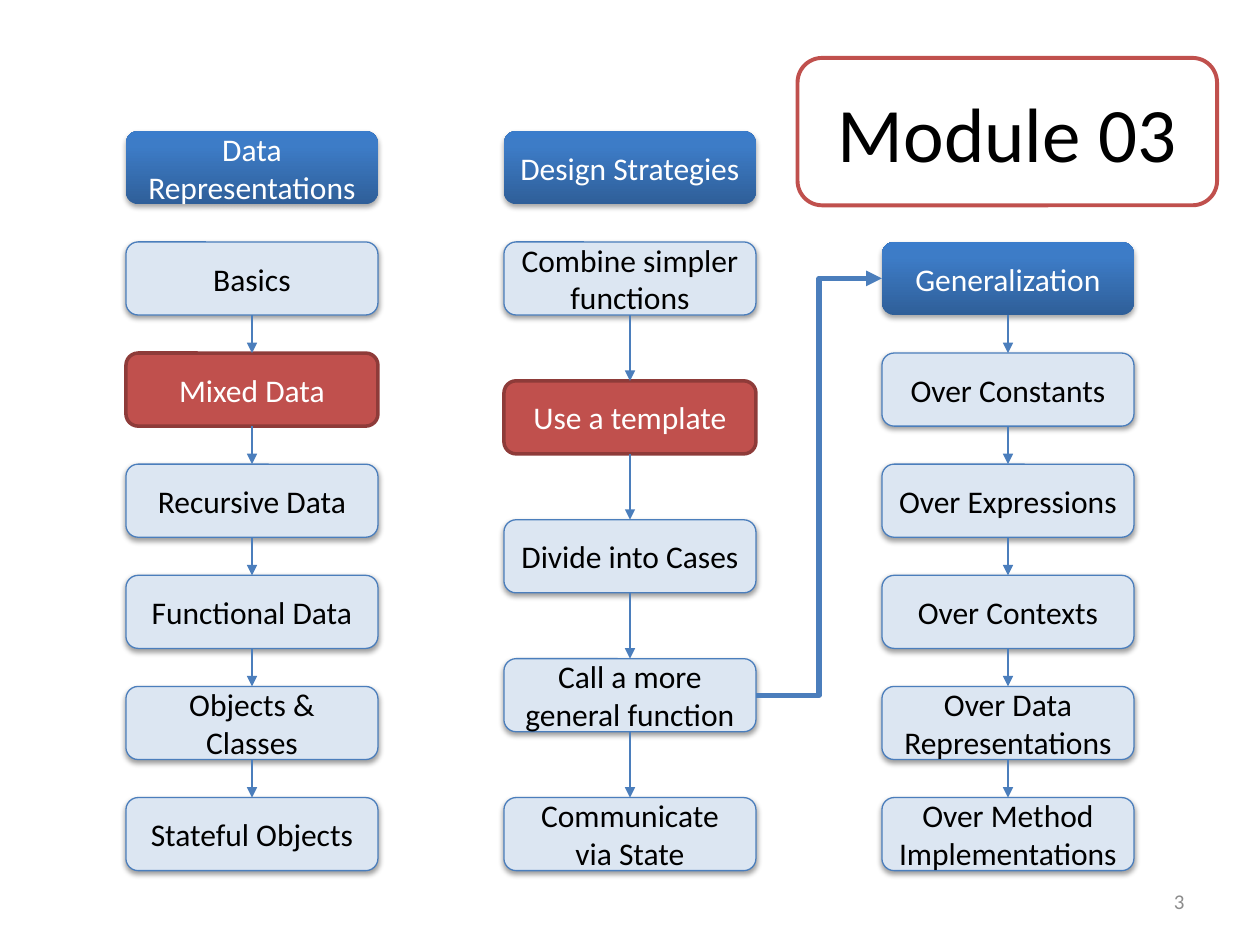
from copy import deepcopy

from lxml import etree
from pptx import Presentation
from pptx import util as u
from pptx.dml.color import RGBColor
from pptx.enum import shapes, text
from pptx.oxml.ns import qn

BLUE = "4B7EBC"
HEADER_STOPS = [(0, "2F5F99"), (0.8, "3D7CC7"), (1, "3A7CCB")]
BOX_WIDTH, BOX_HEIGHT = 2, 0.58
HEADER_TOP, FIRST_TOP, LAST_TOP = 1.04, 1.92, 6.33
TOP, LEFT, BOTTOM, RIGHT = range(4)  # connection sites of a box

HEADER = {"gradient": HEADER_STOPS, "color": "FFFFFF", "shadow": (35, 1.8)}
TOPIC = {"fill": "DCE6F2", "line": BLUE, "shadow": (38, 1.6)}
CURRENT = {"fill": "C0504D", "line": "8E3B39", "line_width": 2, "color": "FFFFFF"}

DATA = ["Basics", "Mixed Data", "Recursive Data", "Functional Data",
        "Objects & Classes", "Stateful Objects"]
STRATEGIES = ["Combine simpler functions", "Use a template", "Divide into Cases",
              "Call a more general function", "Communicate via State"]
GENERALIZATION = ["Generalization", "Over Constants", "Over Expressions", "Over Contexts",
                  "Over Data Representations", "Over Method Implementations"]


def rgb(value):
    return RGBColor.from_string(value)


def write_text(shape, words, size=18, color="000000", align=text.PP_ALIGN.CENTER):
    frame = shape.text_frame
    frame.word_wrap = True
    frame.vertical_anchor = text.MSO_ANCHOR.MIDDLE
    paragraph = frame.paragraphs[0]
    paragraph.alignment = align
    run = paragraph.add_run()
    run.text = words
    run.font.name = "Calibri"
    run.font.size = u.Pt(size)
    run.font.color.rgb = rgb(color)


def fill_gradient(shape, stops):
    """Fill from bottom to top with (position, colour) stops."""
    shape.fill.gradient()
    shape.fill.gradient_angle = 90
    stop_list = shape._element.spPr.find(".//" + qn("a:gsLst"))
    while len(stop_list) < len(stops):
        stop_list.append(deepcopy(stop_list[-1]))
    for stop, (position, color) in zip(shape.fill.gradient_stops, stops):
        stop.position = position
        stop.color.rgb = rgb(color)


def add_shadow(shape, opacity, distance):
    effects = shape._element.spPr.find(qn("a:effectLst"))
    shadow = etree.SubElement(effects, qn("a:outerShdw"), blurRad=str(u.Pt(3.1)),
                              dist=str(u.Pt(distance)), dir="5400000", rotWithShape="0")
    color = etree.SubElement(shadow, qn("a:srgbClr"), val="000000")
    etree.SubElement(color, qn("a:alpha"), val=str(opacity * 1000))


def add_box(slide, words, left, top, width=BOX_WIDTH, height=BOX_HEIGHT, fill=None,
            gradient=None, line=None, line_width=0.75, shadow=None, **text_format):
    box = slide.shapes.add_shape(shapes.MSO_SHAPE.ROUNDED_RECTANGLE, u.Inches(left),
                                 u.Inches(top), u.Inches(width), u.Inches(height))
    box.shadow.inherit = False
    if gradient:
        fill_gradient(box, gradient)
    elif fill:
        box.fill.solid()
        box.fill.fore_color.rgb = rgb(fill)
    else:
        box.fill.background()
    if line:
        box.line.color.rgb = rgb(line)
        box.line.width = u.Pt(line_width)
    else:
        box.line.fill.background()
    if shadow:
        add_shadow(box, *shadow)
    write_text(box, words, **text_format)
    return box


def add_arrow(slide, start, start_site, end, end_site,
              kind=shapes.MSO_CONNECTOR.STRAIGHT, width=0.75):
    arrow = slide.shapes.add_connector(kind, 0, 0, 0, 0)
    arrow.begin_connect(start, start_site)
    arrow.end_connect(end, end_site)
    arrow.line.color.rgb = rgb(BLUE)
    arrow.line.width = u.Pt(width)
    properties = arrow._element.spPr
    etree.SubElement(properties.find(qn("a:ln")), qn("a:tailEnd"), type="triangle")
    etree.SubElement(properties, qn("a:effectLst"))


def add_chain(slide, left, topics, special):
    """Spread linked boxes evenly down a column; special maps a topic to its style."""
    step = (LAST_TOP - FIRST_TOP) / (len(topics) - 1)
    boxes = [add_box(slide, topic, left, FIRST_TOP + i * step, **special.get(topic, TOPIC))
             for i, topic in enumerate(topics)]
    for upper, lower in zip(boxes, boxes[1:]):
        add_arrow(slide, upper, BOTTOM, lower, TOP)
    return boxes


def main():
    presentation = Presentation()
    presentation.slide_width = u.Inches(10)
    presentation.slide_height = u.Inches(7.5)
    slide = presentation.slides.add_slide(presentation.slide_layouts[6])

    add_box(slide, "Data Representations", 1, HEADER_TOP, **HEADER)
    add_chain(slide, 1, DATA, {"Mixed Data": CURRENT})
    add_box(slide, "Design Strategies", 4, HEADER_TOP, **HEADER)
    strategies = add_chain(slide, 4, STRATEGIES, {"Use a template": CURRENT})
    generalization = add_chain(slide, 7, GENERALIZATION, {"Generalization": HEADER})
    add_arrow(slide, strategies[3], RIGHT, generalization[0], LEFT,
              kind=shapes.MSO_CONNECTOR.ELBOW, width=3)

    add_box(slide, "Module 03", 6.33, 0.46, 3.33, 1.17,
            line="C0504D", line_width=2.25, size=44)
    page_number = slide.shapes.add_textbox(u.Inches(7.17), u.Inches(6.95),
                                           u.Inches(2.33), u.Inches(0.4))
    write_text(page_number, "3", size=12, color="8C8C8C", align=text.PP_ALIGN.RIGHT)

    presentation.save("out.pptx")


if __name__ == "__main__":
    main()
